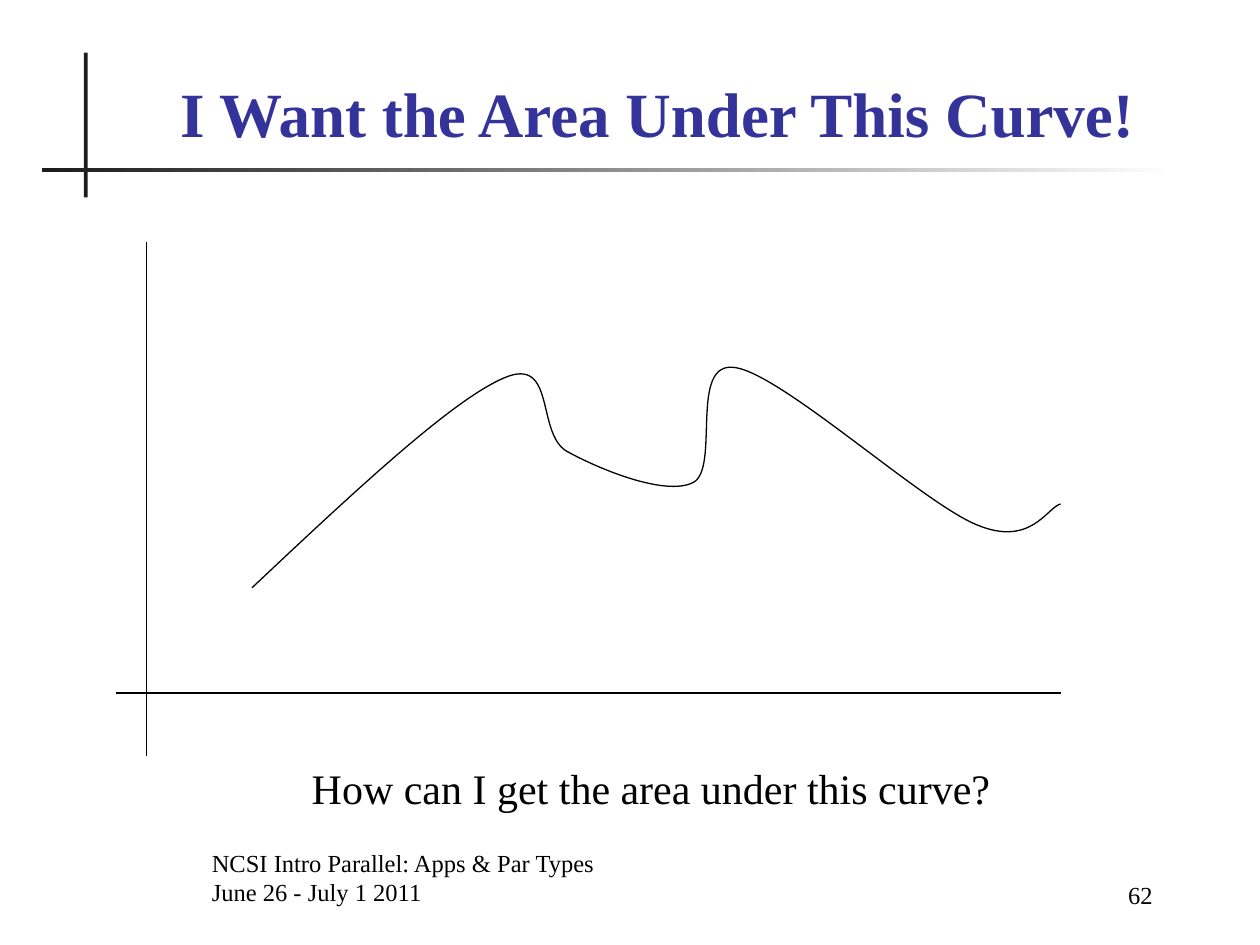
from pptx import Presentation
from pptx.dml.color import RGBColor
from pptx.enum.shapes import MSO_CONNECTOR as Connector, MSO_SHAPE as Shape
from pptx.enum.text import MSO_ANCHOR as Anchor, MSO_AUTO_SIZE as AutoSize, PP_ALIGN as Align
from pptx.oxml.ns import qn
from pptx.util import Cm, Pt
from lxml import etree

BLACK = RGBColor(0x00, 0x00, 0x00)
CHARCOAL = RGBColor(0x1C, 0x1C, 0x1C)
WHITE = RGBColor(0xFF, 0xFF, 0xFF)
INDIGO = RGBColor(0x33, 0x33, 0x99)
FONT = "Times New Roman"


def write_text(frame, lines, align, anchor, color, font_format):
    frame.word_wrap = True
    frame.auto_size = AutoSize.NONE
    frame.vertical_anchor = anchor
    frame.text = "\n".join(lines)
    for paragraph in frame.paragraphs:
        paragraph.alignment = align
        paragraph.font.color.rgb = color
        for name, value in font_format.items():
            setattr(paragraph.font, name, value)


deck = Presentation()
deck.slide_width, deck.slide_height = Cm(25.4), Cm(19.05)
slide = deck.slides.add_slide(deck.slide_layouts[5])
shapes = slide.shapes

upright_bar = shapes.add_shape(Shape.RECTANGLE, Cm(1.69), Cm(1.06), Cm(0.08), Cm(2.92))
upright_bar.fill.solid()
upright_bar.fill.fore_color.rgb = CHARCOAL
fading_bar = shapes.add_shape(Shape.RECTANGLE, Cm(0.85), Cm(3.39), Cm(22.86), Cm(0.08))
fading_bar.fill.gradient()
fading_bar.fill.gradient_angle = 0
for stop, position, color in zip(fading_bar.fill.gradient_stops, (0, 1), (CHARCOAL, WHITE)):
    stop.position = position
    stop.color.rgb = color
for bar in (upright_bar, fading_bar):
    bar.line.fill.background()
    bar.shadow.inherit = False

heading = shapes.title
heading_place = {"left": Cm(2.11), "top": Cm(1.27), "width": Cm(22.28), "height": Cm(1.88)}
for name, value in heading_place.items():
    setattr(heading, name, value)
write_text(heading.text_frame, ["I Want the Area Under This Curve!"], Align.CENTER, Anchor.BOTTOM,
           INDIGO, {"name": FONT, "size": Pt(36), "bold": True})

for ends in ((2.96, 4.87, 2.96, 15.24), (2.33, 13.97, 21.38, 13.97)):
    axis_line = shapes.add_connector(Connector.STRAIGHT, *map(Cm, ends))
    axis_line.line.color.rgb = BLACK
    axis_line.line.width = Pt(0.75)
    etree.SubElement(axis_line._element.spPr, qn("a:effectLst"))

curve_start = (5.08, 11.85)
curve_points = [
    (7.09, 9.96), (9.1, 8.07), (10.16, 7.62),
    (11.22, 7.16), (10.8, 8.74), (11.43, 9.1),
    (12.06, 9.45), (13.4, 10.01), (13.97, 9.73),
    (14.53, 9.45), (13.87, 7.26), (14.82, 7.41),
    (15.77, 7.55), (18.59, 10.13), (19.69, 10.58),
    (20.78, 11.04), (21.11, 10.23), (21.38, 10.16),
]
builder = shapes.build_freeform(*map(Cm, curve_start))
builder.add_line_segments([tuple(map(Cm, point)) for point in curve_points], close=False)
curve = builder.convert_to_shape()
outline = next(curve._element.iter(qn("a:path")))
segments = outline.findall(qn("a:lnTo"))
for first in range(0, len(segments), 3):
    bend = etree.SubElement(outline, qn("a:cubicBezTo"))
    for segment in segments[first:first + 3]:
        bend.append(segment[0])
        outline.remove(segment)
curve.fill.background()
curve.line.color.rgb = BLACK
curve.line.width = Pt(0.75)
curve.shadow.inherit = False

captions = [
    ((19.89, 17.18, 3.6, 1.27), ["62"], Align.RIGHT, Anchor.BOTTOM, 14),
    ((2.33, 15.24, 21.59, 1.27), ["How can I get the area under this curve?"],
     Align.CENTER, Anchor.TOP, 24),
    ((4.02, 17.13, 15.45, 1.27),
     ["NCSI Intro Parallel: Apps & Par Types", "June 26 - July 1 2011"],
     Align.LEFT, Anchor.BOTTOM, 14),
]
for place, lines, align, anchor, size in captions:
    caption = shapes.add_textbox(*map(Cm, place))
    write_text(caption.text_frame, lines, align, anchor, BLACK, {"name": FONT, "size": Pt(size)})

deck.save("out.pptx")
